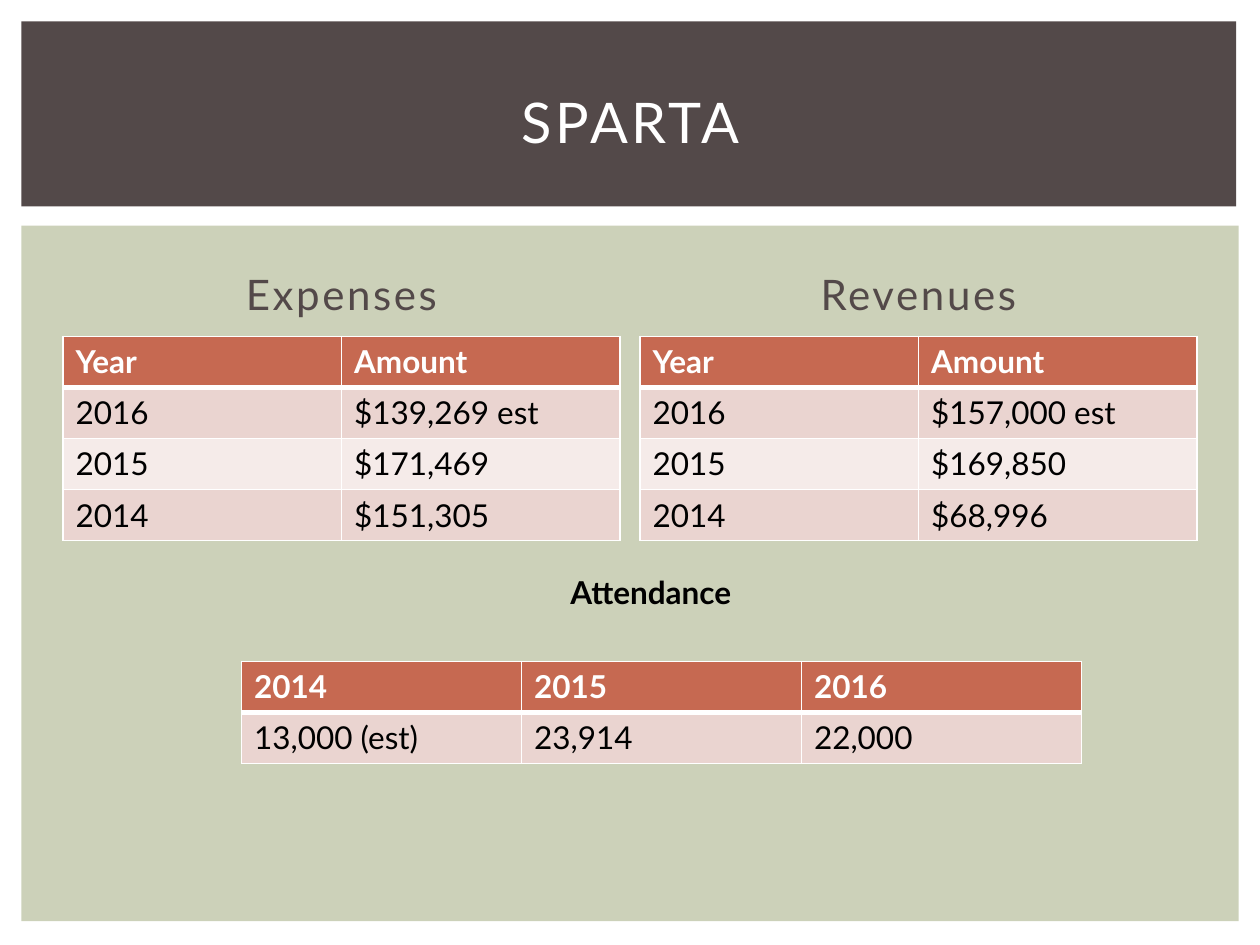
from dataclasses import dataclass

from lxml.etree import SubElement
from pptx import Presentation
from pptx.dml.color import RGBColor
from pptx.enum.shapes import MSO_SHAPE as Shape
from pptx.enum.text import MSO_ANCHOR as Anchor, PP_ALIGN as Align
from pptx.oxml.ns import qn
from pptx.util import Cm, Pt


@dataclass(frozen=True)
class Theme:
    font: str = "Lato"
    white: str = "FFFFFF"
    black: str = "000000"
    dark: str = "534949"
    panel: str = "CCD1B9"
    header: str = "C66951"
    bands: tuple = ("EAD4D0", "F5EBE9")
    title_size: float = 32
    heading_size: float = 24
    body_size: float = 18


@dataclass(frozen=True)
class Box:
    """A region of the slide, in centimetres."""
    left: float
    top: float
    width: float
    height: float

    def lengths(self):
        return Cm(self.left), Cm(self.top), Cm(self.width), Cm(self.height)


THEME = Theme()
ROW_HEIGHT = 1.03
EXPENSES = [("Year", "Amount"), ("2016", "$139,269 est"),
            ("2015", "$171,469"), ("2014", "$151,305")]
REVENUES = [("Year", "Amount"), ("2016", "$157,000 est"),
            ("2015", "$169,850"), ("2014", "$68,996")]
ATTENDANCE = [("2014", "2015", "2016"), ("13,000 (est)", "23,914", "22,000")]


def add_run(paragraph, text, size, color, bold=False, spacing=0):
    """Add a run; spacing is the gap between letters in points."""
    run = paragraph.add_run()
    run.text = text
    run.font.name = THEME.font
    run.font.size = Pt(size)
    run.font.bold = bold
    run.font.color.rgb = RGBColor.from_string(color)
    if spacing:
        run.font._element.set("spc", str(int(spacing * 100)))


def add_panel(slide, box, color):
    shape = slide.shapes.add_shape(Shape.RECTANGLE, *box.lengths())
    shape.shadow.inherit = False
    shape.fill.solid()
    shape.fill.fore_color.rgb = RGBColor.from_string(color)
    shape.line.fill.background()


def add_label(slide, box, text, size, color, anchor=Anchor.TOP, **style):
    frame = slide.shapes.add_textbox(*box.lengths()).text_frame
    frame.word_wrap = True
    frame.vertical_anchor = anchor
    paragraph = frame.paragraphs[0]
    paragraph.alignment = Align.CENTER
    add_run(paragraph, text, size, color, **style)


def set_borders(cell, top, bottom):
    """Draw white borders; top and bottom are widths in points."""
    properties = cell._tc.get_or_add_tcPr()
    for side, width in (("L", 1), ("R", 1), ("T", top), ("B", bottom)):
        line = SubElement(properties, qn(f"a:ln{side}"), w=str(Pt(width)))
        fill = SubElement(line, qn("a:solidFill"))
        SubElement(fill, qn("a:srgbClr"), val=THEME.white)


def add_data_table(slide, left, top, width, rows):
    """Add a table with a header row and banded rows below it."""
    box = Box(left, top, width, ROW_HEIGHT * len(rows))
    table = slide.shapes.add_table(len(rows), len(rows[0]), *box.lengths()).table
    for column in table.columns:
        column.width = Cm(width / len(rows[0]))
    for row_index, values in enumerate(rows):
        is_header = row_index == 0
        table.rows[row_index].height = Cm(ROW_HEIGHT)
        fill = THEME.header if is_header else THEME.bands[(row_index - 1) % 2]
        for column_index, value in enumerate(values):
            cell = table.cell(row_index, column_index)
            set_borders(cell, 3 if row_index == 1 else 1, 3 if is_header else 1)
            cell.fill.solid()
            cell.fill.fore_color.rgb = RGBColor.from_string(fill)
            add_run(cell.text_frame.paragraphs[0], value, THEME.body_size,
                    THEME.white if is_header else THEME.black, bold=is_header)


def add_title_band(slide, box):
    add_panel(slide, box, THEME.dark)
    title_box = Box(box.left + 0.64, box.top + 0.56, box.width - 1.2, 2.92)
    add_label(slide, title_box, "SPARTA", THEME.title_size, THEME.white,
              Anchor.MIDDLE, spacing=2)


def add_finance_column(slide, box, heading, rows):
    add_label(slide, Box(box.left, box.top, box.width, 1.78), heading,
              THEME.heading_size, THEME.dark, Anchor.BOTTOM, spacing=1.5)
    add_data_table(slide, box.left, box.top + 2, box.width, rows)


def add_attendance(slide, box):
    add_label(slide, Box(box.left + 2.75, box.top, 11, 1.03), "Attendance",
              THEME.body_size, THEME.black, bold=True)
    add_data_table(slide, box.left, box.top + 1.9, box.width, ATTENDANCE)


def add_body(slide, box):
    add_panel(slide, box, THEME.panel)
    column_width, gap = 11.23, 0.4
    for index, (heading, rows) in enumerate(
            (("Expenses", EXPENSES), ("Revenues", REVENUES))):
        left = box.left + 0.84 + index * (column_width + gap)
        add_finance_column(slide, Box(left, box.top + 0.23, column_width, 6.12),
                           heading, rows)
    add_attendance(slide, Box(box.left + 4.44, box.top + 6.88, 16.93, 3.96))


def main():
    presentation = Presentation()
    presentation.slide_width, presentation.slide_height = Cm(25.4), Cm(19.05)
    slide = presentation.slides.add_slide(presentation.slide_layouts[6])
    add_title_band(slide, Box(0.43, 0.43, 24.49, 3.73))
    add_body(slide, Box(0.43, 4.55, 24.54, 14.02))
    presentation.save("out.pptx")


if __name__ == "__main__":
    main()
